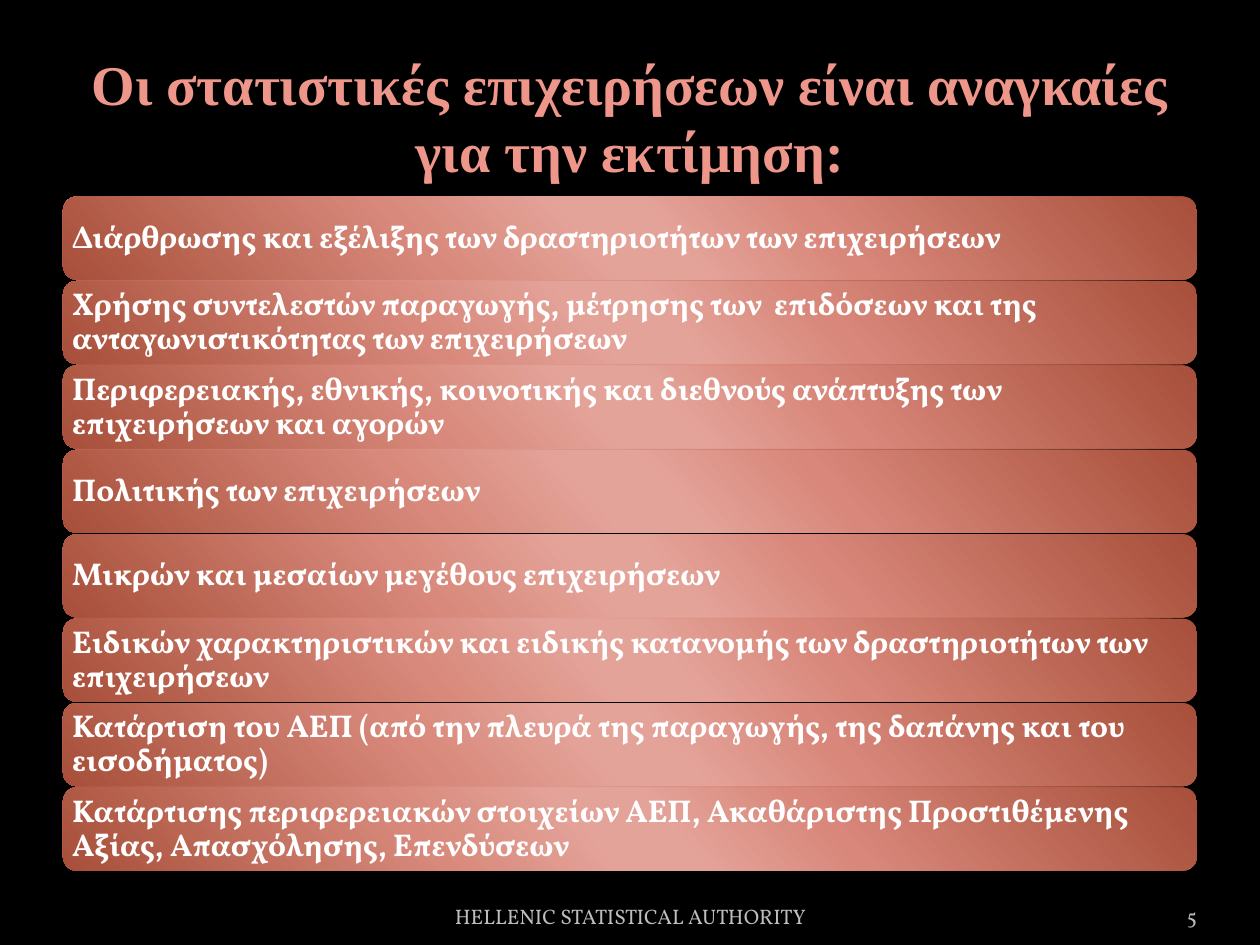
from pptx import Presentation
from pptx.dml.color import RGBColor
from pptx.enum.shapes import MSO_SHAPE
from pptx.enum.text import MSO_ANCHOR, PP_ALIGN
from pptx.oxml import parse_xml
from pptx.oxml.ns import nsdecls
from pptx.util import Inches, Pt

THEME = {
    "background": "000000",
    "bar_text": "FFFFFF",
    "footer_text": "BDBDBD",
    "title_stops": [(0, "EE968A"), (73, "EE968A"), (100, "EC8171")],
    "title_angle": 80,
    "bar_stops": [(0, "A74F3A"), (33, "D8877A"), (47, "E4A399"),
                  (53, "E4A399"), (68, "D8897B"), (100, "A74F3A")],
    "bar_angle": 139,
    "title_font": "Times New Roman",
    "body_font": "Vollkorn",
    "title_size": 32,
    "bar_size": 18,
    "footer_size": 12,
}


def gradient(stops, angle):
    marks = "".join(
        f'<a:gs pos="{position * 1000}"><a:srgbClr val="{color}"/></a:gs>'
        for position, color in stops)
    return parse_xml(
        f'<a:gradFill {nsdecls("a")} rotWithShape="1"><a:gsLst>{marks}</a:gsLst>'
        f'<a:lin ang="{angle * 60000}" scaled="0"/></a:gradFill>')


def write(shape, text, font, size, color=None, align=PP_ALIGN.LEFT,
          anchor=MSO_ANCHOR.MIDDLE, bold=False, inset=(0.1, 0.05)):
    frame = shape.text_frame
    frame.word_wrap = True
    frame.vertical_anchor = anchor
    frame.margin_left = frame.margin_right = Inches(inset[0])
    frame.margin_top = frame.margin_bottom = Inches(inset[1])
    para = frame.paragraphs[0]
    para.alignment = align
    span = para.add_run()
    span.text = text
    span.font.name = font
    span.font.size = Pt(size)
    span.font.bold = bold
    if color:
        span.font.color.rgb = RGBColor.from_string(color)
    return para, span


deck = Presentation()
deck.slide_width, deck.slide_height = Inches(10), Inches(7.5)
page = deck.slides.add_slide(deck.slide_layouts[6])
page.background.fill.solid()
page.background.fill.fore_color.rgb = RGBColor.from_string(THEME["background"])

# Grid: one column between equal margins, eight rows of bars
margin = deck.slide_width * 0.05
column = deck.slide_width - 2 * margin
first_row, row_pitch, bar_height = Inches(1.56), Inches(0.67), Inches(0.66)
footer_top, footer_height = Inches(7.02), Inches(0.4)

# Title
box = page.shapes.add_textbox(int(margin), Inches(0.3), int(column), Inches(1.25))
para, span = write(box, "Οι στατιστικές επιχειρήσεων είναι αναγκαίες για την εκτίμηση:",
                   THEME["title_font"], THEME["title_size"],
                   align=PP_ALIGN.CENTER, bold=True)
span.font._element.insert(0, gradient(THEME["title_stops"], THEME["title_angle"]))

# Bars
purposes = [
    "Διάρθρωσης και εξέλιξης των δραστηριοτήτων των επιχειρήσεων",
    "Χρήσης συντελεστών παραγωγής, μέτρησης των  επιδόσεων και της ανταγωνιστικότητας των επιχειρήσεων",
    "Περιφερειακής, εθνικής, κοινοτικής και διεθνούς ανάπτυξης των επιχειρήσεων και αγορών",
    "Πολιτικής των επιχειρήσεων",
    "Μικρών και μεσαίων μεγέθους επιχειρήσεων",
    "Ειδικών χαρακτηριστικών και ειδικής κατανομής των δραστηριοτήτων των επιχειρήσεων",
    "Κατάρτιση του ΑΕΠ (από την πλευρά της παραγωγής, της δαπάνης και του εισοδήματος)",
    "Κατάρτισης περιφερειακών στοιχείων ΑΕΠ, Ακαθάριστης Προστιθέμενης Αξίας, Απασχόλησης, Επενδύσεων",
]
for row, purpose in enumerate(purposes):
    bar = page.shapes.add_shape(MSO_SHAPE.ROUNDED_RECTANGLE, int(margin),
                                first_row + row * row_pitch, int(column), bar_height)
    bar.shadow.inherit = False
    bar.line.fill.background()
    bar._element.spPr.prstGeom.addnext(gradient(THEME["bar_stops"], THEME["bar_angle"]))
    para, span = write(bar, purpose, THEME["body_font"], THEME["bar_size"],
                       THEME["bar_text"], bold=True, inset=(0.04, 0.04))
    para.line_spacing = 0.9
    para.space_after = Pt(6)

# Footer and page number
footers = [
    ("HELLENIC STATISTICAL AUTHORITY", 3.42, 3.17, PP_ALIGN.CENTER, 0.1),
    ("5", 8.67, 0.83, PP_ALIGN.RIGHT, 0),
]
for text, left, width, align, side in footers:
    box = page.shapes.add_textbox(Inches(left), footer_top, Inches(width), footer_height)
    write(box, text, THEME["body_font"], THEME["footer_size"], THEME["footer_text"],
          align, MSO_ANCHOR.BOTTOM, inset=(side, 0.05))

deck.save("out.pptx")
